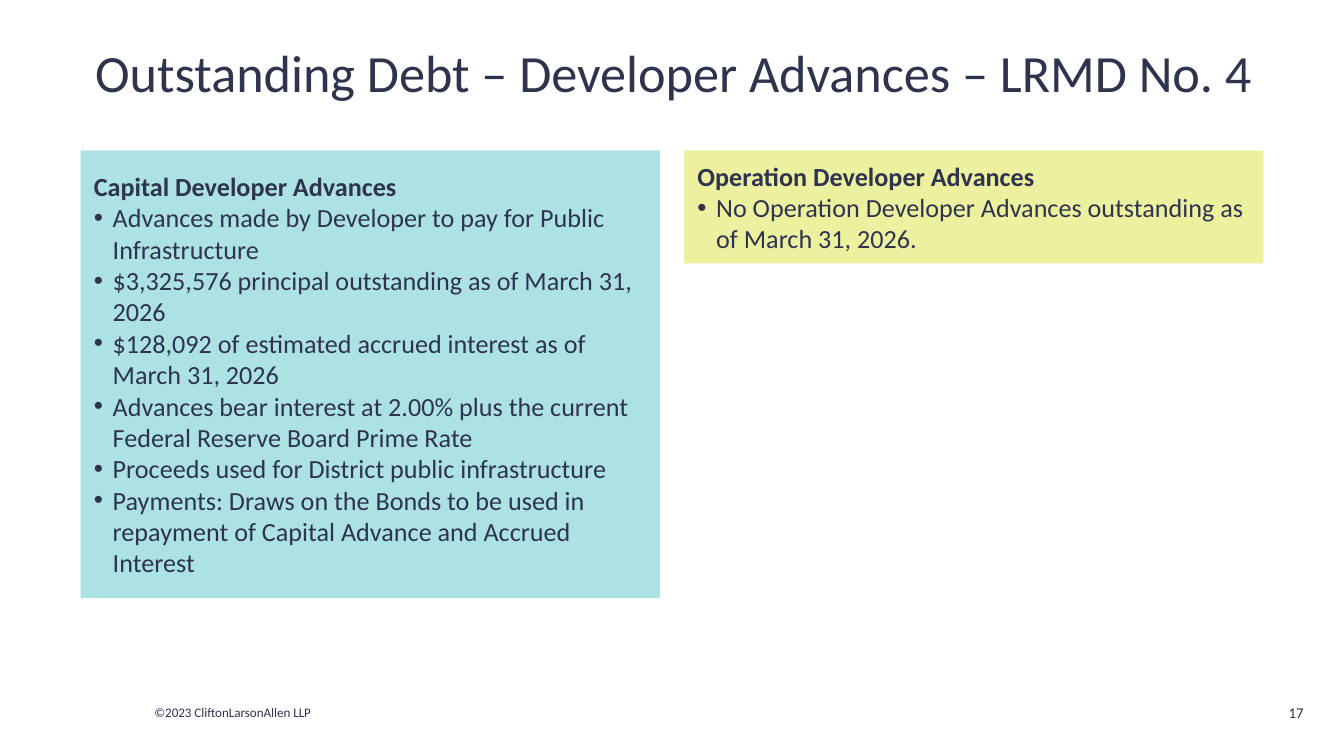
from dataclasses import dataclass

from lxml.etree import SubElement
from pptx import Presentation
from pptx.dml.color import RGBColor
from pptx.enum.shapes import MSO_SHAPE
from pptx.enum.text import MSO_ANCHOR, PP_ALIGN
from pptx.oxml.ns import qn
from pptx.util import Inches, Pt


@dataclass(frozen=True)
class Theme:
    font: str = "Calibri"
    ink: RGBColor = RGBColor(0x2E, 0x33, 0x4E)
    teal: RGBColor = RGBColor(0x7D, 0xD2, 0xD3)
    lime: RGBColor = RGBColor(0xE2, 0xE8, 0x68)
    panel_opacity: int = 63
    title: int = 28
    body: int = 14
    number: int = 8
    copyright: int = 7


THEME = Theme()

CAPITAL_ADVANCES = [
    "Advances made by Developer to pay for Public Infrastructure",
    "$3,325,576 principal outstanding as of March 31, 2026",
    "$128,092 of estimated accrued interest as of March 31, 2026",
    "Advances bear interest at 2.00% plus the current Federal Reserve Board Prime Rate",
    "Proceeds used for District public infrastructure",
    "Payments: Draws on the Bonds to be used in repayment of Capital Advance and Accrued Interest",
]
OPERATION_ADVANCES = [
    "No Operation Developer Advances outstanding as of March 31, 2026.",
]


def write(p, text, size, align=PP_ALIGN.LEFT, bold=False):
    p.text = text
    p.alignment = align
    for r in p.runs:
        r.font.name = THEME.font
        r.font.size = Pt(size)
        r.font.bold = bold
        r.font.color.rgb = THEME.ink


def add_bullet(p, indent=0.14):
    pPr = p._p.get_or_add_pPr()
    pPr.set("marL", str(Inches(indent)))
    pPr.set("indent", str(-Inches(indent)))
    SubElement(pPr, qn("a:buFont"), typeface="Arial")
    SubElement(pPr, qn("a:buChar"), char="•")


def fill_translucent(sp, color, opacity):
    sp.fill.solid()
    sp.fill.fore_color.rgb = color
    clr = sp._element.spPr.find(qn("a:solidFill"))[0]
    SubElement(clr, qn("a:alpha"), val=str(opacity * 1000))


def add_label(s, text, box, size, align=PP_ALIGN.LEFT):
    tf = s.shapes.add_textbox(*map(Inches, box)).text_frame
    tf.word_wrap = True
    tf.vertical_anchor = MSO_ANCHOR.MIDDLE
    write(tf.paragraphs[0], text, size, align)


def add_panel(s, heading, items, left, height, color):
    sp = s.shapes.add_shape(MSO_SHAPE.RECTANGLE, Inches(left), Inches(1.12),
                            Inches(4.31), Inches(height))
    sp.shadow.inherit = False
    sp.line.fill.background()
    fill_translucent(sp, color, THEME.panel_opacity)

    tf = sp.text_frame
    tf.word_wrap = True
    tf.vertical_anchor = MSO_ANCHOR.MIDDLE
    write(tf.paragraphs[0], heading, THEME.body, bold=True)
    for item in items:
        p = tf.add_paragraph()
        add_bullet(p)
        write(p, item, THEME.body)


def main():
    # Widescreen 16:9 page
    prs = Presentation()
    prs.slide_width = Inches(10)
    prs.slide_height = prs.slide_width * 9 // 16
    s = prs.slides.add_slide(prs.slide_layouts[6])

    # Title
    add_label(s, "Outstanding Debt – Developer Advances – LRMD No. 4",
              (0.21, 0.16, 9.6, 0.75), THEME.title, PP_ALIGN.CENTER)

    # Advances, side by side
    add_panel(s, "Capital Developer Advances", CAPITAL_ADVANCES,
              0.6, 3.33, THEME.teal)
    add_panel(s, "Operation Developer Advances", OPERATION_ADVANCES,
              5.09, 0.84, THEME.lime)

    # Footer
    add_label(s, "©2023 CliftonLarsonAllen LLP",
              (1.05, 5.19, 1.51, 0.22), THEME.copyright)
    add_label(s, "17", (9.37, 5.11, 0.43, 0.38), THEME.number, PP_ALIGN.RIGHT)

    prs.save("out.pptx")


if __name__ == "__main__":
    main()
